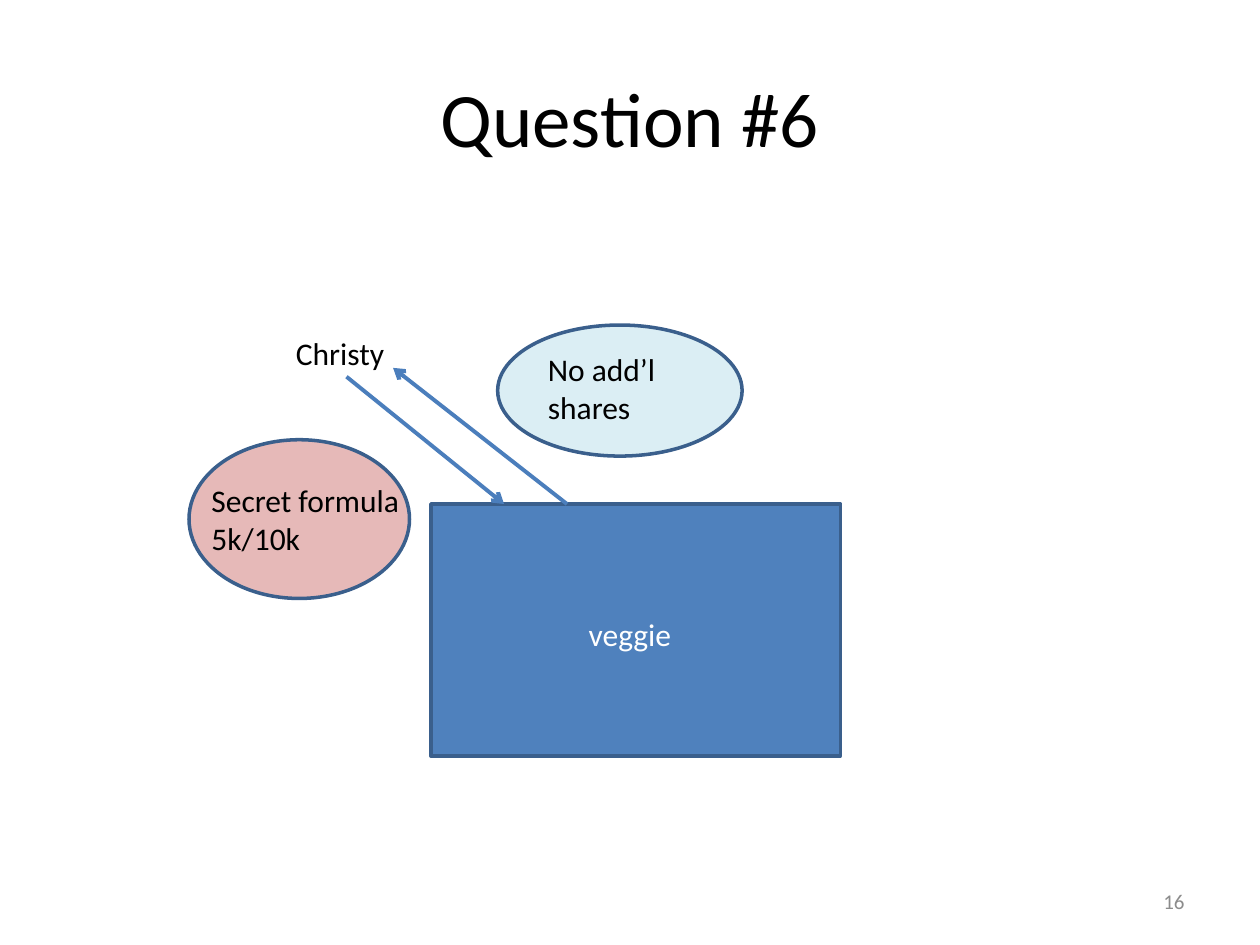
from lxml import etree
from pptx import Presentation
from pptx.dml.color import RGBColor
from pptx.enum.shapes import MSO_CONNECTOR, MSO_SHAPE
from pptx.enum.text import MSO_ANCHOR as Anchor, PP_ALIGN as Align
from pptx.oxml.ns import qn
from pptx.util import Inches, Pt


def color(hex_string):
    return RGBColor.from_string(hex_string)


def add_text(text, left, top, width, height, size=18, fill="000000",
             align=Align.LEFT, anchor=Anchor.TOP):
    box = slide.shapes.add_textbox(Inches(left), Inches(top), Inches(width), Inches(height))
    frame = box.text_frame
    frame.word_wrap = True
    frame.vertical_anchor = anchor
    frame.text = text
    for paragraph in frame.paragraphs:
        paragraph.alignment = align
        paragraph.font.name = "Calibri"
        paragraph.font.size = Pt(size)
        paragraph.font.color.rgb = color(fill)


presentation = Presentation()
presentation.slide_width = Inches(10)
presentation.slide_height = Inches(7.5)
slide = presentation.slides.add_slide(presentation.slide_layouts[6])

# Title and slide number
add_text("Question #6", 0.5, 0.3, 9, 1.25, size=44, align=Align.CENTER, anchor=Anchor.MIDDLE)
add_text("16", 7.17, 6.95, 2.33, 0.4, size=12, fill="8C8C8C", align=Align.RIGHT,
         anchor=Anchor.MIDDLE)

# Company box and the two contribution ovals
for kind, left, top, width, height, fill in [
    (MSO_SHAPE.RECTANGLE, 3.42, 4, 3.25, 2, "4F81BD"),
    (MSO_SHAPE.OVAL, 1.5, 3.49, 1.75, 1.26, "E6B9B8"),
    (MSO_SHAPE.OVAL, 3.95, 2.58, 1.94, 1.04, "DBEEF4"),
]:
    shape = slide.shapes.add_shape(kind, Inches(left), Inches(top), Inches(width), Inches(height))
    shape.shadow.inherit = False
    shape.fill.solid()
    shape.fill.fore_color.rgb = color(fill)
    shape.line.color.rgb = color("3A5F8C")
    shape.line.width = Pt(2)

# Exchange arrows between Christy and the company
for start_x, start_y, end_x, end_y in [(2.75, 2.99, 4, 4), (4.5, 4, 3.12, 2.92)]:
    arrow = slide.shapes.add_connector(MSO_CONNECTOR.STRAIGHT, Inches(start_x), Inches(start_y),
                                       Inches(end_x), Inches(end_y))
    arrow.line.color.rgb = color("4B7EBC")
    arrow.line.width = Pt(2.25)
    etree.SubElement(arrow.line._get_or_add_ln(), qn("a:tailEnd"), type="arrow")
    etree.SubElement(arrow._element.spPr, qn("a:effectLst"))

# Labels
add_text("veggie", 4, 4.83, 2, 0.4, fill="FFFFFF", align=Align.CENTER)
add_text("Christy", 2.25, 2.6, 1.75, 0.4)
add_text("Secret formula\n5k/10k", 1.58, 3.77, 1.8, 0.71)
add_text("No add’l\nshares", 4.25, 2.73, 1.33, 0.71)

presentation.save("out.pptx")
